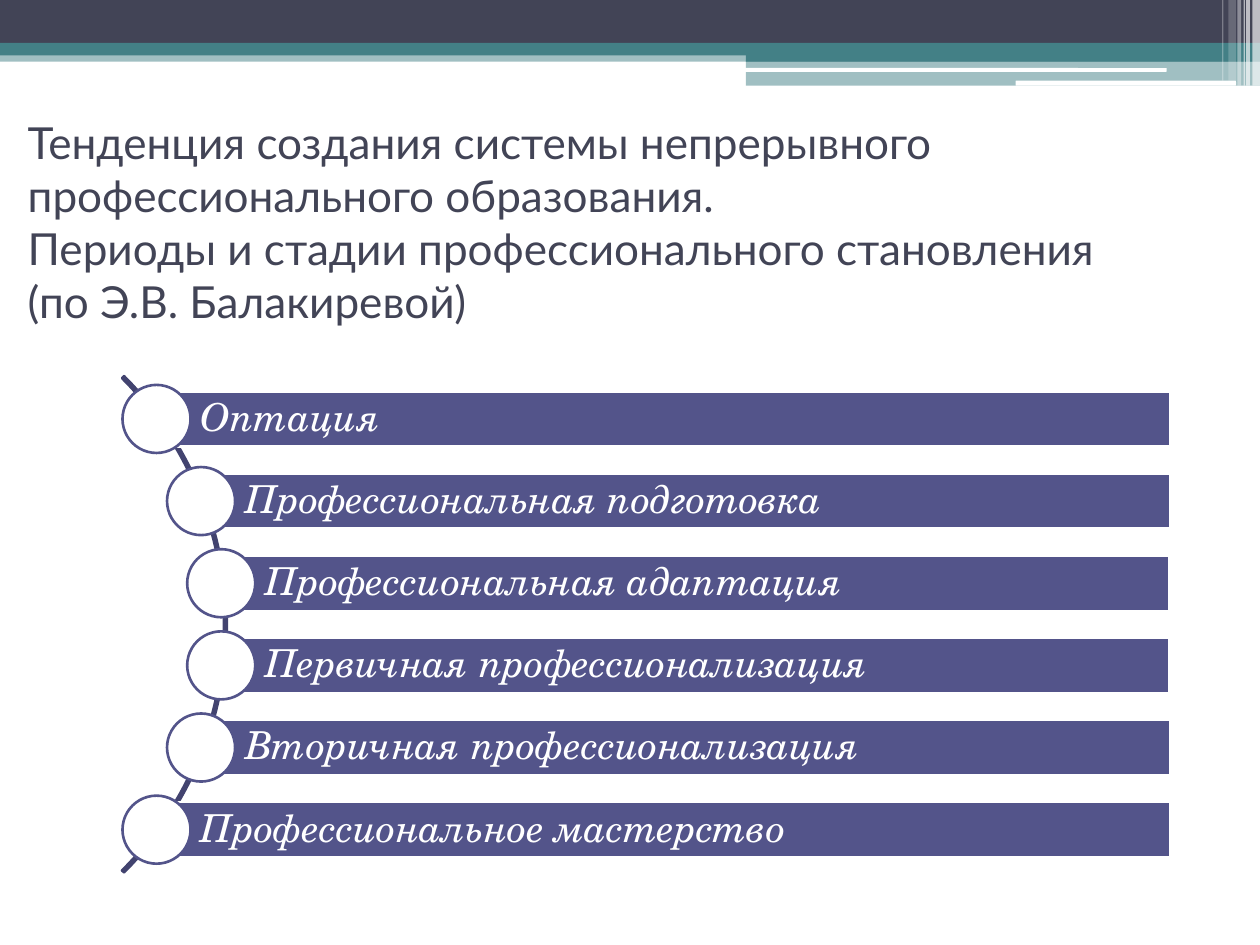
"""Build a slide on the stages of professional development."""
import dataclasses
import math

import pptx
import pptx.dml.color
import pptx.enum.shapes
import pptx.enum.text
import pptx.oxml
import pptx.oxml.ns
import pptx.util

SHAPE = pptx.enum.shapes.MSO_SHAPE
ANCHOR = pptx.enum.text.MSO_ANCHOR
ALIGN = pptx.enum.text.PP_ALIGN
CELL = pptx.util.Inches(0.1)
COLUMNS, ROWS = 100, 75


@dataclasses.dataclass(frozen=True)
class Theme:
    ink: str = "424456"
    teal: str = "438086"
    violet: str = "53548A"
    arc: str = "42436F"
    paper: str = "FFFFFF"
    title_font: str = "Lato"
    stage_font: str = "TeX Gyre Schola"
    title_size: float = 25.2
    stage_size: float = 22
    line_width: float = 1.5


THEME = Theme()
TITLE_LINES = [
    "Тенденция создания системы непрерывного",
    "профессионального образования.",
    "Периоды и стадии профессионального становления",
    "(по Э.В. Балакиревой)",
]
STAGES = [
    "Оптация",
    "Профессиональная подготовка",
    "Профессиональная адаптация",
    "Первичная профессионализация",
    "Вторичная профессионализация",
    "Профессиональное мастерство",
]
BANDS = [
    (0, 4, 100, 0.9, THEME.teal, 50),
    (0, 0, 100, 3.4, THEME.ink, 100),
    (0, 3.4, 100, 1, THEME.teal, 100),
    (59.2, 3.9, 40.8, 1, THEME.teal, 100),
    (59.2, 4.8, 40.8, 2, THEME.teal, 50),
]
RULES = [(59.1, 5.4, 33.5, 0.3), (80.6, 6.4, 17.5, 0.4)]
STRIPES = [
    (99.4, 0.6, 6.8, 65),
    (98.9, 0.3, 6.8, 65),
    (98.7, 0.1, 6.8, 60),
    (98.2, 0.3, 6.8, 40),
    (97.5, 0.6, 6.4, 20),
    (97, 0.1, 6.4, 30),
]
ARC_CENTER = (-9.85, 49.55)
ARC_RADIUS = 27.85
NODE_RADIUS = 27.6
NODE_SIZE = 5.4
BAR_HEIGHT = 4.4
BAR_RIGHT = 92.85
STAGE_STEP = 6.52


def cells(*lengths):
    """Turn grid counts into slide lengths."""
    return [round(length * CELL) for length in lengths]


def color(value):
    """Return a colour object for a hex value."""
    return pptx.dml.color.RGBColor.from_string(value)


def add_shape(slide, kind, box, fill=None, line=None, opacity=100):
    """Add a flat preset shape at a grid box."""
    shape = slide.shapes.add_shape(kind, *cells(*box))
    shape.shadow.inherit = False
    if fill:
        shape.fill.solid()
        shape.fill.fore_color.rgb = color(fill)
    else:
        shape.fill.background()
    if opacity < 100:
        target = shape.fill._xPr.find(".//" + pptx.oxml.ns.qn("a:srgbClr"))
        namespace = pptx.oxml.ns.nsdecls("a")
        target.append(pptx.oxml.parse_xml(f'<a:alpha {namespace} val="{opacity * 1000}"/>'))
    if line:
        shape.line.color.rgb = color(line)
        shape.line.width = pptx.util.Pt(THEME.line_width)
    else:
        shape.line.fill.background()
    return shape


def write(shape, text, *, font, size, ink, italic=False, spacing=1.0, insets=(1, 0.5, 1, 0.5)):
    """Write left-aligned, vertically centred text into a shape."""
    frame = shape.text_frame
    frame.word_wrap = True
    frame.auto_size = pptx.enum.text.MSO_AUTO_SIZE.NONE
    frame.vertical_anchor = ANCHOR.MIDDLE
    frame.margin_left, frame.margin_top, frame.margin_right, frame.margin_bottom = cells(*insets)
    paragraph = frame.paragraphs[0]
    paragraph.text = text
    paragraph.alignment = ALIGN.LEFT
    paragraph.line_spacing = spacing
    for run in paragraph.runs:
        run.font.name = font
        run.font.size = pptx.util.Pt(size)
        run.font.italic = italic
        run.font.color.rgb = color(ink)


def add_header(slide):
    """Draw the bands, rules and stripes along the top edge."""
    for *box, fill, opacity in BANDS:
        add_shape(slide, SHAPE.RECTANGLE, box, fill, opacity=opacity)
    for box in RULES:
        add_shape(slide, SHAPE.ROUNDED_RECTANGLE, box, THEME.paper)
    for left, width, height, opacity in STRIPES:
        add_shape(slide, SHAPE.RECTANGLE, (left, 0, width, height), THEME.paper, opacity=opacity)


def add_title(slide):
    """Place and write the title."""
    title = slide.shapes.title
    title.left, title.top, title.width, title.height = cells(1.2, 9.2, 93.8, 16.8)
    write(title, "\v".join(TITLE_LINES), font=THEME.title_font, size=THEME.title_size, ink=THEME.ink)


def add_arc(slide):
    """Draw the thin arc that the stages follow."""
    center_x, center_y = ARC_CENTER
    box = (center_x - ARC_RADIUS, center_y - ARC_RADIUS, 2 * ARC_RADIUS, 2 * ARC_RADIUS)
    arc = add_shape(slide, SHAPE.BLOCK_ARC, box, line=THEME.arc)
    for index, value in enumerate((189, 27, 0.004)):
        arc.adjustments[index] = value


def add_stage(slide, index, text):
    """Add one stage bar with its round node on the arc."""
    center_x, center_y = ARC_CENTER
    offset = (index - (len(STAGES) - 1) / 2) * STAGE_STEP
    left = center_x + math.sqrt(NODE_RADIUS ** 2 - offset ** 2)
    middle = center_y + offset
    bar_box = (left, middle - BAR_HEIGHT / 2, BAR_RIGHT - left, BAR_HEIGHT)
    bar = add_shape(slide, SHAPE.RECTANGLE, bar_box, THEME.violet, THEME.paper)
    write(bar, text, font=THEME.stage_font, size=THEME.stage_size, ink=THEME.paper,
          italic=True, spacing=0.9, insets=(3.5, 0.6, 0.6, 0.6))
    node_box = (left - NODE_SIZE / 2, middle - NODE_SIZE / 2, NODE_SIZE, NODE_SIZE)
    add_shape(slide, SHAPE.OVAL, node_box, THEME.paper, THEME.violet)


def main():
    """Build and save the presentation."""
    presentation = pptx.Presentation()
    presentation.slide_width, presentation.slide_height = cells(COLUMNS, ROWS)
    slide = presentation.slides.add_slide(presentation.slide_layouts.get_by_name("Title Only"))
    add_header(slide)
    add_title(slide)
    add_arc(slide)
    for index, text in enumerate(STAGES):
        add_stage(slide, index, text)
    presentation.save("out.pptx")


if __name__ == "__main__":
    main()
